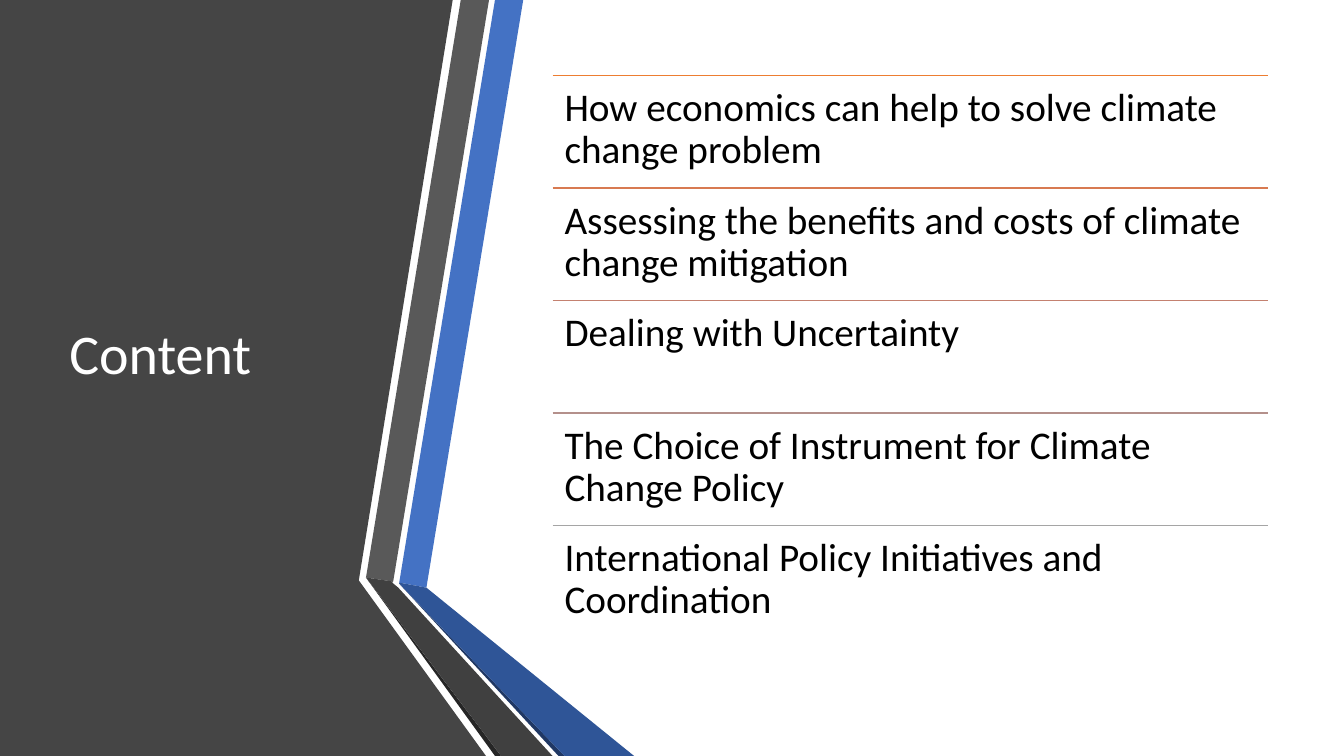
"""Build the content slide: a folded ribbon panel and a ruled list of topics."""
import pptx
import pptx.dml.color
import pptx.enum.shapes
import pptx.enum.text
import pptx.oxml
import pptx.util

Inches = pptx.util.Inches

TITLE = "Content"
TOPICS = [
    ("How economics can help to solve climate change problem", "ED7D31"),
    ("Assessing the benefits and costs of climate change mitigation", "D87A51"),
    ("Dealing with Uncertainty", "C48170"),
    ("The Choice of Instrument for Climate Change Policy", "B4908B"),
    ("International Policy Initiatives and Coordination", "A5A5A5"),
]
THEME = {
    "font": "Calibri",
    "title": {"size": 40, "color": "FFFFFF"},
    "topic": {"size": 28, "color": "000000"},
    "rule": 1,
    "panel": "454545",
    "blue": "4472C4", "blue_fold": "2F5597", "blue_edge": "203864",
    "gray": "595959", "gray_fold": "404040", "gray_edge": "262626",
}
OUTLINES = [
    ("panel", [(0, 0), (4.49, 0), (3.56, 5.75), (3.56, 5.76), (4.82, 7.5), (0, 7.5)]),
    ("blue", [(3.96, 5.78), (4.23, 5.83), (5.19, 0), (4.91, 0)]),
    ("gray", [(4.85, 0), (4.57, 0), (3.63, 5.73), (3.9, 5.77)]),
    ("gray_edge", [(3.63, 5.73), (4.91, 7.5), (4.97, 7.5)]),
    ("blue_edge", [(3.96, 5.79), (5.54, 7.5), (5.6, 7.5)]),
    ("blue_fold", [(3.96, 5.79), (5.6, 7.5), (6.29, 7.5), (4.23, 5.83), (3.96, 5.78)]),
    ("gray_fold", [(5.48, 7.5), (3.95, 5.83), (3.89, 5.78), (3.9, 5.77),
                   (3.63, 5.73), (4.97, 7.5)]),
]
TITLE_BOX = (0.59, 0.75, 3.04, 5.58)
LIST_LEFT, LIST_TOP, LIST_WIDTH, LIST_HEIGHT = 5.48, 0.75, 7.1, 5.58
TOPIC_INSET = 0.12


def rgb(value):
    return pptx.dml.color.RGBColor.from_string(value)


def add_outline(shapes, color, points):
    start, *rest = [(Inches(x), Inches(y)) for x, y in points]
    fb = shapes.build_freeform(*start)
    fb.add_line_segments(rest, close=True)
    sp = fb.convert_to_shape()
    sp.shadow.inherit = False
    sp.fill.solid()
    sp.fill.fore_color.rgb = rgb(color)
    sp.line.fill.background()


def add_text(shapes, box, text, style, frame_format, paragraph_format):
    tf = shapes.add_textbox(*map(Inches, box)).text_frame
    p = tf.paragraphs[0]
    r = p.add_run()
    r.text = text
    font_format = {"name": THEME["font"], "size": pptx.util.Pt(style["size"])}
    for target, values in ((tf, frame_format), (p, paragraph_format), (r.font, font_format)):
        for name, value in values.items():
            setattr(target, name, value)
    r.font.color.rgb = rgb(style["color"])


def add_rule(shapes, y, color):
    ends = map(Inches, (LIST_LEFT, y, LIST_LEFT + LIST_WIDTH, y))
    rule = shapes.add_connector(pptx.enum.shapes.MSO_CONNECTOR.STRAIGHT, *ends)
    rule.line.color.rgb = rgb(color)
    rule.line.width = pptx.util.Pt(THEME["rule"])
    rule._element.spPr.append(pptx.oxml.parse_xml(
        '<a:effectLst xmlns:a="http://schemas.openxmlformats.org/drawingml/2006/main"/>'))


def main():
    prs = pptx.Presentation()
    prs.slide_width, prs.slide_height = Inches(13.33), Inches(7.5)
    shapes = prs.slides.add_slide(prs.slide_layouts[6]).shapes
    anchor = pptx.enum.text.MSO_ANCHOR
    for key, points in OUTLINES:
        add_outline(shapes, THEME[key], points)
    add_text(shapes, TITLE_BOX, TITLE, THEME["title"],
             {"word_wrap": True, "vertical_anchor": anchor.MIDDLE},
             {"line_spacing": 0.9})
    margins = ("margin_left", "margin_top", "margin_right", "margin_bottom")
    topic_frame = {"word_wrap": True, "vertical_anchor": anchor.TOP,
                   **dict.fromkeys(margins, Inches(TOPIC_INSET))}
    row = LIST_HEIGHT / len(TOPICS)
    for i, (topic, color) in enumerate(TOPICS):
        y = LIST_TOP + i * row
        add_rule(shapes, y, color)
        add_text(shapes, (LIST_LEFT, y, LIST_WIDTH, row), topic, THEME["topic"],
                 topic_frame, {"line_spacing": 0.9})
    prs.save("out.pptx")


if __name__ == "__main__":
    main()
